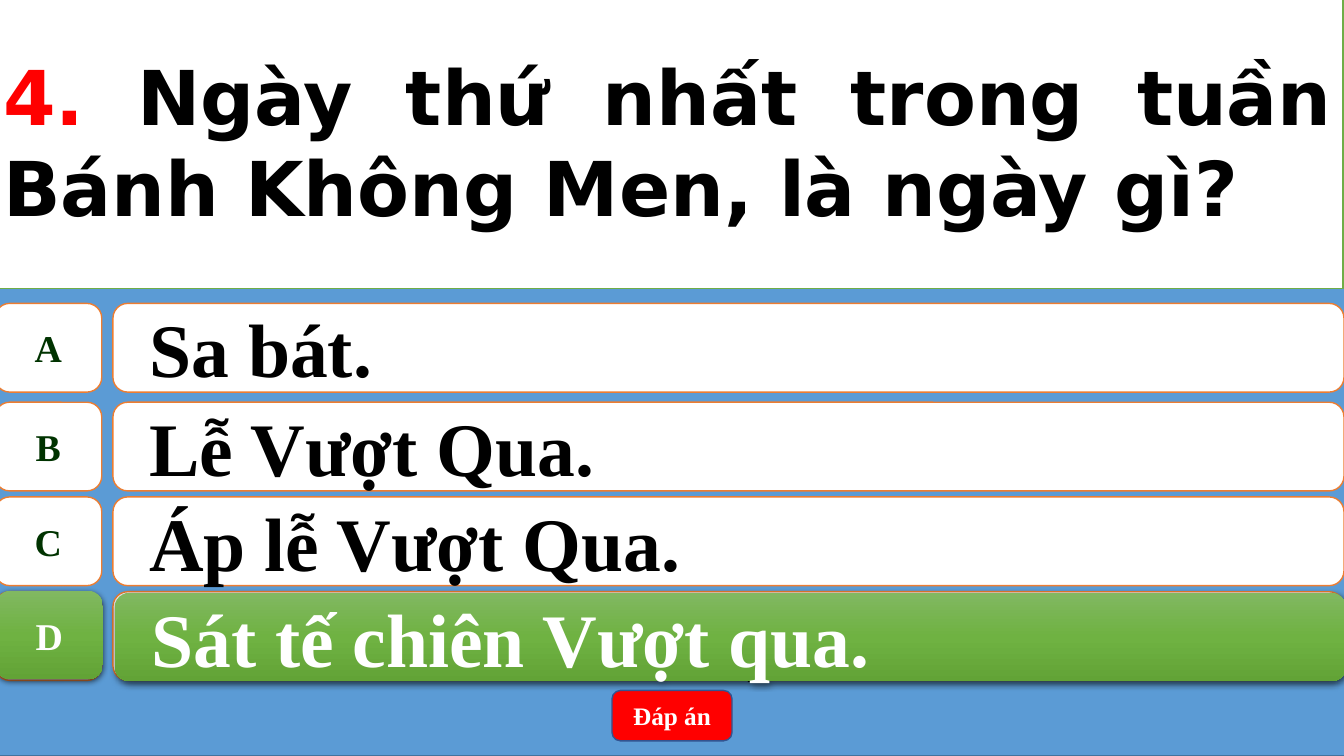
from copy import deepcopy

from lxml import etree
from pptx import Presentation
from pptx.dml.color import RGBColor
from pptx.enum.shapes import MSO_SHAPE
from pptx.enum.text import MSO_ANCHOR, MSO_AUTO_SIZE, PP_ALIGN
from pptx.oxml import parse_xml
from pptx.oxml.ns import nsdecls, qn
from pptx.util import Inches, Pt

RECT, ROUNDED = MSO_SHAPE.RECTANGLE, MSO_SHAPE.ROUNDED_RECTANGLE
LETTER_BOX = MSO_SHAPE.FLOWCHART_ALTERNATE_PROCESS
CENTER, LEFT, JUSTIFY = PP_ALIGN.CENTER, PP_ALIGN.LEFT, PP_ALIGN.JUSTIFY
MIDDLE = MSO_ANCHOR.MIDDLE

WHITE = RGBColor(0xFF, 0xFF, 0xFF)
BLACK = RGBColor(0x00, 0x00, 0x00)
RED = RGBColor(0xFF, 0x00, 0x00)
BLUE = RGBColor(0x5B, 0x9B, 0xD5)
BLUE_EDGE = RGBColor(0x43, 0x73, 0x9E)
BUTTON_EDGE = RGBColor(0x32, 0x54, 0x91)
ORANGE = RGBColor(0xED, 0x7D, 0x31)
GREEN = RGBColor(0x70, 0xAD, 0x47)
DARK_GREEN = RGBColor(0x00, 0x33, 0x00)
ANSWER_GRADIENT = [
    (0, RGBColor(0x81, 0xB8, 0x61)),
    (0.5, RGBColor(0x6F, 0xB2, 0x42)),
    (1, RGBColor(0x62, 0xA3, 0x36)),
]
SERIF, SANS = "Times New Roman", "DejaVu Sans"

EDGE = -0.05
ROW_HEIGHT = 0.88
LETTER_WIDTH = 1.06
CHOICE_LEFT, CHOICE_WIDTH = 1.12, 12.21
ROW_TOPS = [3.01] + [3.99 + 0.94 * step for step in range(3)]
CHOICES = ["Sa bát.", "Lễ Vượt Qua.", "Áp lễ Vượt Qua.", "Sát tế chiên Vượt qua."]

prs = Presentation()
prs.slide_width, prs.slide_height = Inches(13.33), Inches(7.5)
slide = prs.slides.add_slide(prs.slide_layouts[5])


def add_box(kind, left, top, width, height, fill, edge):
    """Add a box; without a fill colour it gets the answer gradient and a shadow."""
    box = slide.shapes.add_shape(
        kind, Inches(left), Inches(top), Inches(width), Inches(height))
    box.shadow.inherit = False
    if fill is not None:
        box.fill.solid()
        box.fill.fore_color.rgb = fill
        box.line.color.rgb = edge
        box.line.width = Pt(1)
        return box
    box.line.fill.background()
    box.fill.gradient()
    box.fill.gradient_angle = 270
    stop_list = box._element.spPr.find(qn("a:gradFill")).find(qn("a:gsLst"))
    stop_list.append(deepcopy(stop_list[0]))
    for stop, (position, color) in zip(box.fill.gradient_stops, ANSWER_GRADIENT):
        stop.position = position
        stop.color.rgb = color
    effects = box._element.spPr.find(qn("a:effectLst"))
    effects.append(parse_xml(
        f'<a:outerShdw {nsdecls("a")} blurRad="{Pt(4.5)}" dist="{Pt(1.5)}" '
        'dir="5400000" algn="ctr" rotWithShape="0">'
        '<a:srgbClr val="000000"><a:alpha val="63000"/></a:srgbClr></a:outerShdw>'))
    return box


def write(box, runs, size, font, align):
    frame = box.text_frame
    frame.vertical_anchor = MIDDLE
    paragraph = frame.paragraphs[0]
    paragraph.alignment = align
    for text, color in runs:
        run = paragraph.add_run()
        run.text = text
        run.font.size, run.font.name, run.font.bold = Pt(size), font, True
        run.font.color.rgb = color
    return paragraph


# Background
add_box(RECT, EDGE, 0, 13.39, 7.5, BLUE, BLUE_EDGE)

# Choices, then the highlighted answer on top of the last one
rows = [(0, top, letter, choice, WHITE, DARK_GREEN, BLACK)
        for top, letter, choice in zip(ROW_TOPS, "ABCD", CHOICES)]
rows.append((0.01, ROW_TOPS[-1], "D", CHOICES[-1], None, WHITE, WHITE))
for shift, top, letter, choice, fill, letter_color, choice_color in rows:
    letter_box = add_box(LETTER_BOX, EDGE + shift, top - shift,
                         LETTER_WIDTH, ROW_HEIGHT, fill, ORANGE)
    write(letter_box, [(letter, letter_color)], 27, SERIF, CENTER)
    letter_box.text_frame.word_wrap = False

    choice_box = add_box(ROUNDED, CHOICE_LEFT + 2 * shift, top + shift,
                         CHOICE_WIDTH, ROW_HEIGHT, fill, ORANGE)
    paragraph = write(choice_box, [(choice, choice_color)], 54, SERIF, LEFT)
    paragraph.level = 1
    indents = paragraph._p.get_or_add_pPr()
    indents.set("marL", str(Inches(0.5)))
    indents.set("indent", str(Inches(-0.28)))
    etree.SubElement(indents, qn("a:buNone"))

# Answer button
button = add_box(ROUNDED, 6.07, 6.85, 1.19, 0.5, RED, BUTTON_EDGE)
write(button, [("Đáp án", WHITE)], 18, SERIF, CENTER)

# Question, in front of the background
question = slide.shapes.title
question.left, question.top = Inches(-0.07), Inches(-0.07)
question.width, question.height = Inches(13.39), Inches(2.93)
question.fill.solid()
question.fill.fore_color.rgb = WHITE
question.line.color.rgb = GREEN
question.line.width = Pt(1)
question.text_frame.word_wrap = True
question.text_frame.auto_size = MSO_AUTO_SIZE.NONE
write(question, [("4. ", RED),
                 ("Ngày thứ nhất trong tuần Bánh Không Men, là ngày gì?", BLACK)],
      54, SANS, JUSTIFY)
slide.shapes._spTree.append(question._element)

prs.save("out.pptx")
